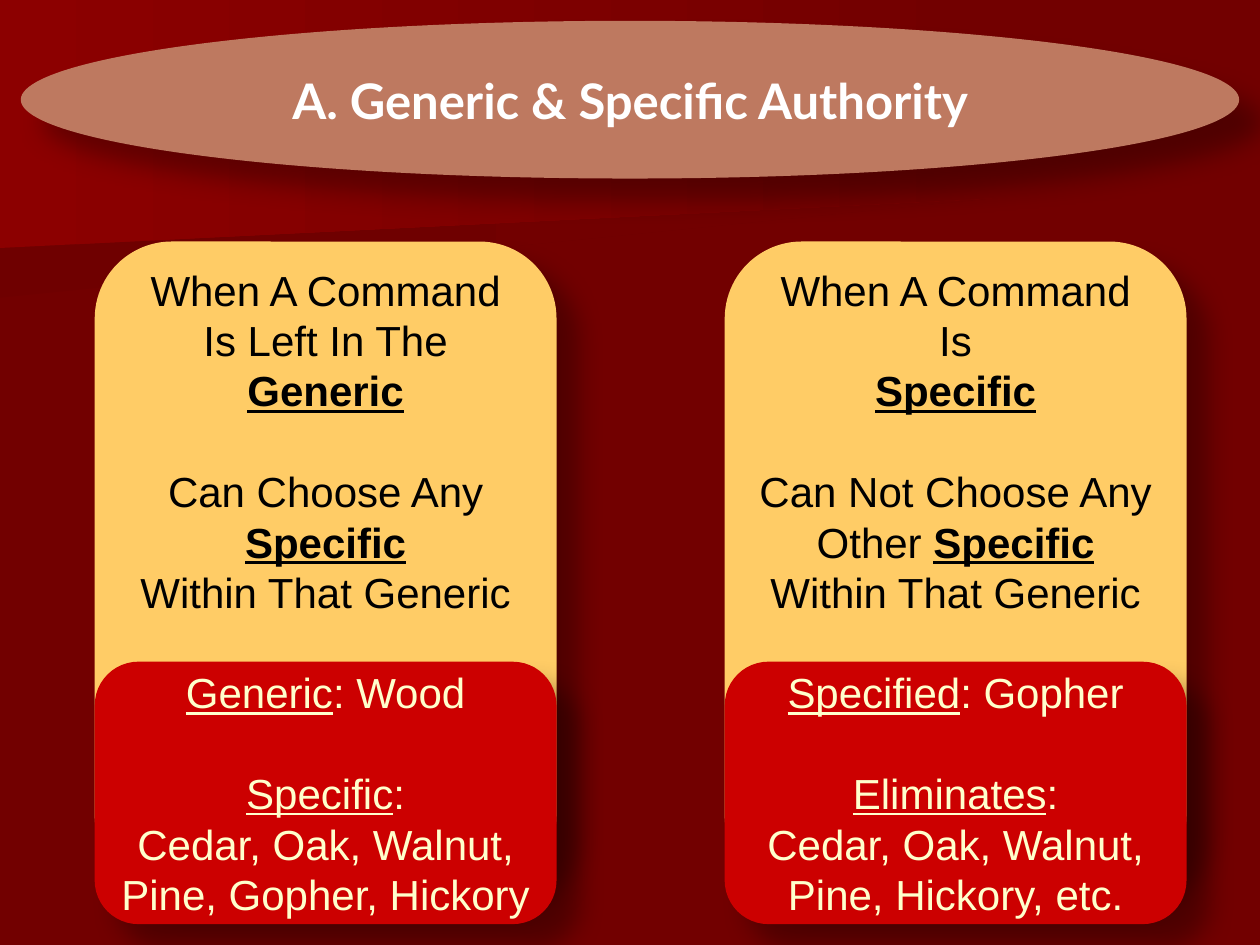
from lxml import etree
from pptx import Presentation
from pptx import util as u
from pptx.dml.color import RGBColor
from pptx.enum import shapes, text
from pptx.oxml import ns

BACKGROUND = RGBColor(0x72, 0x00, 0x00)
DEEP_RED = RGBColor(0x6F, 0x00, 0x00)
BRIGHT_RED = RGBColor(0x8C, 0x00, 0x00)
CLAY = RGBColor(0xBE, 0x79, 0x60)
GOLD = RGBColor(0xFF, 0xCC, 0x66)
RED = RGBColor(0xCC, 0x00, 0x00)
CREAM = RGBColor(0xFF, 0xFF, 0xCC)
BLACK = RGBColor(0x00, 0x00, 0x00)
WHITE = RGBColor(0xFF, 0xFF, 0xFF)

LINE_HEIGHT = u.Cm(1.016)
COLUMN_LEFTS = [1.91, 14.61]
COMMANDS = [
    ["When A Command", "Is Left In The", "*Generic*", "",
     "Can Choose Any", "*Specific*", "Within That Generic"],
    ["When A Command", "Is", "*Specific*", "",
     "Can Not Choose Any", "Other *Specific*", "Within That Generic"],
]
EXAMPLES = [
    ["*Generic*: Wood", "", "*Specific*:",
     "Cedar, Oak, Walnut,", "Pine, Gopher, Hickory"],
    ["*Specified*: Gopher", "", "*Eliminates*:",
     "Cedar, Oak, Walnut,", "Pine, Hickory, etc."],
]


def add_panel(page, kind, left, top, width, height, color):
    panel = page.shapes.add_shape(
        kind, u.Cm(left), u.Cm(top), u.Cm(width), u.Cm(height))
    panel.fill.solid()
    panel.fill.fore_color.rgb = color
    panel.line.fill.background()
    panel.shadow.inherit = False
    effects = panel.element.spPr.find(ns.qn("a:effectLst"))
    shadow = etree.SubElement(
        effects, ns.qn("a:outerShdw"), blurRad=str(u.Pt(15)), dist=str(u.Pt(18)),
        dir="2700000", algn="ctr", rotWithShape="0")
    shade = etree.SubElement(shadow, ns.qn("a:srgbClr"), val=str(BLACK))
    etree.SubElement(shade, ns.qn("a:alpha"), val="30000")
    frame = panel.text_frame
    frame.word_wrap = False
    frame.margin_left = frame.margin_right = 0
    frame.margin_top = frame.margin_bottom = 0
    frame.vertical_anchor = text.MSO_ANCHOR.MIDDLE
    return panel


def write_lines(frame, lines, color, bold_terms):
    gap = False
    first = True
    for line in lines:
        if not line:
            gap = True
            continue
        para = frame.paragraphs[0] if first else frame.add_paragraph()
        first = False
        para.alignment = text.PP_ALIGN.CENTER
        para.line_spacing = LINE_HEIGHT
        para.space_before = LINE_HEIGHT if gap else 0
        gap = False
        para.font.name = "Arial"
        para.font.size = u.Pt(24)
        para.font.color.rgb = color
        for index, part in enumerate(line.split("*")):
            if part:
                span = para.add_run()
                span.text = part
                if index % 2:
                    span.font.underline = True
                    span.font.bold = bold_terms


deck = Presentation()
deck.slide_width = u.Cm(25.4)
deck.slide_height = u.Cm(19.05)
page = deck.slides.add_slide(deck.slide_layouts[6])
page.background.fill.solid()
page.background.fill.fore_color.rgb = BACKGROUND

BANDS = [
    (DEEP_RED, [(19.76, 3.89), (0, 5.51), (0, 2.57), (19.79, 2.57), (19.76, 3.25)]),
    (BRIGHT_RED, [(20.12, 4.11), (0, 5.28), (0, 0), (20.12, 0)]),
]
for color, points in BANDS:
    builder = page.shapes.build_freeform(*points[0], scale=u.Cm(1))
    builder.add_line_segments(points[1:], close=True)
    band = builder.convert_to_shape()
    band.shadow.inherit = False
    band.line.fill.background()
    band.fill.gradient()
    band.fill.gradient_angle = 0
    for stop, position, tint in zip(band.fill.gradient_stops, (0, 1), (color, BACKGROUND)):
        stop.position = position
        stop.color.rgb = tint

title = add_panel(page, shapes.MSO_SHAPE.OVAL, 0.42, 0.42, 24.56, 3.18, CLAY)
para = title.text_frame.paragraphs[0]
para.text = "A. Generic & Specific Authority"
para.alignment = text.PP_ALIGN.CENTER
para.font.name = "Lato"
para.font.size = u.Pt(28)
para.font.bold = True
para.font.color.rgb = WHITE

for left, command, example in zip(COLUMN_LEFTS, COMMANDS, EXAMPLES):
    rounded = shapes.MSO_SHAPE.ROUNDED_RECTANGLE
    command_box = add_panel(page, rounded, left, 4.87, 9.31, 13.12, GOLD)
    command_box.text_frame.vertical_anchor = text.MSO_ANCHOR.TOP
    write_lines(command_box.text_frame, command, BLACK, True)

    example_box = add_panel(page, rounded, left, 13.34, 9.31, 5.29, RED)
    write_lines(example_box.text_frame, example, CREAM, False)
    last_line = example_box.text_frame.paragraphs[-1]
    last_line.font.element.getparent().set("marR", str(u.Cm(0.46))) if hasattr(
        last_line.font, "element") else None

deck.save("out.pptx")
